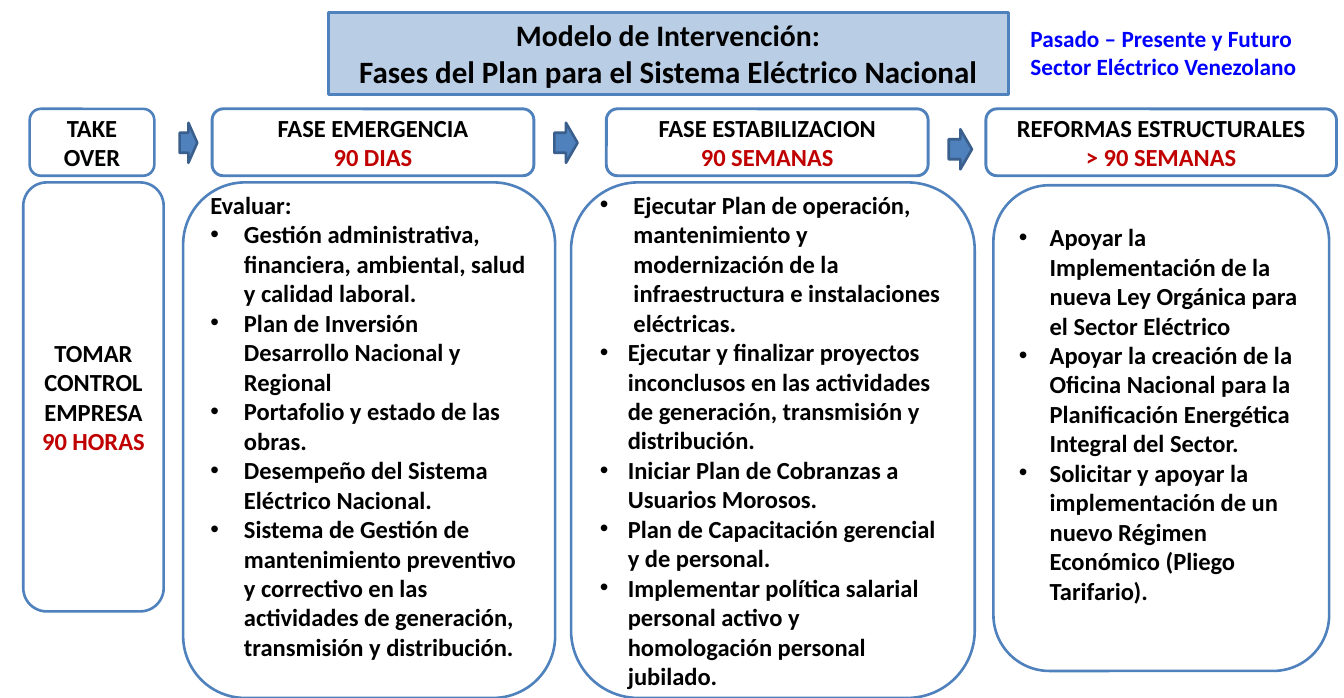
import pptx
import pptx.util
import pptx.dml.color
import pptx.enum.shapes
import pptx.enum.text
import lxml.etree

Pt = pptx.util.Pt
Kind = pptx.enum.shapes.MSO_SHAPE
Align = pptx.enum.text.PP_ALIGN
Anchor = pptx.enum.text.MSO_ANCHOR

HUES = {"ink": "000000", "red": "C00000", "link": "0000FF", "white": "FFFFFF",
        "pale": "B9CDE5", "blue": "4F81BD", "edge": "3A5F8C"}

TITLE = [("Modelo de Intervención:", 23), ("Fases del Plan para el Sistema Eléctrico Nacional", 24)]
THEME = ["Pasado – Presente y Futuro", "Sector Eléctrico Venezolano"]

HEADS = [
    (23, 96.5, 2, "TAKE OVER", None),
    (164.2, 249.1, 2.25, "FASE EMERGENCIA", "90 DIAS"),
    (469.4, 249.1, 2.25, "FASE ESTABILIZACION", "90 SEMANAS"),
    (763.2, 271.4, 2.25, "REFORMAS ESTRUCTURALES", "> 90 SEMANAS"),
]
ARROWS = [(139, 95, 13.7), (429.1, 95, 18), (734.4, 100, 18)]

TAKE = ((18, 141.1, 108.7, 331.9), "TOMAR CONTROL EMPRESA", "90 HORAS")
PHASES = [
    ((141.8, 141.1, 288, 398.9), 26, [
        ("Evaluar:", 0),
        ("Gestión administrativa, financiera, ambiental, salud y calidad laboral.", 26),
        ("Plan de Inversión Desarrollo Nacional y Regional", 26),
        ("Portafolio y estado de las obras.", 26),
        ("Desempeño del Sistema Eléctrico Nacional.", 26),
        ("Sistema de Gestión de mantenimiento preventivo y correctivo en las "
         "actividades de generación, transmisión y distribución.", 26)]),
    ((442.1, 141.1, 312.5, 398.9), 3.6, [
        ("Ejecutar Plan de operación, mantenimiento y modernización de la "
         "infraestructura e instalaciones eléctricas.", 26),
        ("Ejecutar y finalizar proyectos inconclusos en las actividades de "
         "generación, transmisión y distribución.", 21.6),
        ("Iniciar Plan de Cobranzas a Usuarios Morosos.", 21.6),
        ("Plan de Capacitación gerencial y de personal.", 21.6),
        ("Implementar política salarial personal activo y homologación personal jubilado.", 21.6)]),
    ((769, 143.3, 259.9, 375.8), 26, [
        ("Apoyar la Implementación de la nueva Ley Orgánica para el Sector Eléctrico", 23.8),
        ("Apoyar la creación de la Oficina Nacional para la Planificación "
         "Energética Integral del Sector.", 23.8),
        ("Solicitar y apoyar la implementación de un nuevo Régimen Económico "
         "(Pliego Tarifario).", 23.8)]),
]

deck = pptx.Presentation()
deck.slide_width, deck.slide_height = Pt(1040.4), Pt(540)
slide = deck.slides.add_slide(deck.slide_layouts[6])


def tint(name):
    return pptx.dml.color.RGBColor.from_string(HUES[name])


def apply(item, values):
    for key, value in values.items():
        setattr(item, key, value)


def draw(kind, at, width=2, fill="white", edge="blue"):
    shape = slide.shapes.add_shape(kind, *map(Pt, at))
    shape.shadow.inherit = False
    shape.fill.solid()
    shape.fill.fore_color.rgb = tint(fill)
    shape.line.color.rgb = tint(edge)
    shape.line.width = Pt(width)
    return shape


def write(shape, lines, align=Align.CENTER, anchor=Anchor.MIDDLE, foot=3.6, wrap=True):
    frame = shape.text_frame
    apply(frame, {"word_wrap": wrap, "vertical_anchor": anchor,
                  "margin_left": Pt(7.2), "margin_right": Pt(7.2),
                  "margin_top": Pt(3.6), "margin_bottom": Pt(foot)})
    for i, (text, size, hue, indent) in enumerate(lines):
        para = frame.add_paragraph() if i else frame.paragraphs[0]
        para.alignment = align
        if indent:
            props = para._p.get_or_add_pPr()
            props.set("marL", str(Pt(indent)))
            props.set("indent", str(-Pt(indent)))
            tag = "{http://schemas.openxmlformats.org/drawingml/2006/main}"
            lxml.etree.SubElement(props, tag + "buFont").set("typeface", "Arial")
            lxml.etree.SubElement(props, tag + "buChar").set("char", "•")
        run = para.add_run()
        run.text = text
        apply(run.font, {"name": "Calibri", "size": Pt(size), "bold": True})
        run.font.color.rgb = tint(hue)


def label(at, width, name, term):
    lines = [(name, 19, "ink", 0)]
    if term:
        lines.append((term, 19, "red", 0))
    write(draw(Kind.ROUNDED_RECTANGLE, at, width), lines)


title = draw(Kind.RECTANGLE, (254.2, 9.4, 526.3, 64), 2.25, "pale")
write(title, [(text, size, "ink", 0) for text, size in TITLE], anchor=Anchor.TOP)

theme = slide.shapes.add_textbox(*map(Pt, (790.6, 15.1, 223.2, 51.1)))
write(theme, [(text, 18, "link", 0) for text in THEME], Align.LEFT, Anchor.TOP, wrap=False)

for left, wide, width, name, term in HEADS:
    label((left, 84.2, wide, 51.8), width, name, term)

for left, top, wide in ARROWS:
    draw(Kind.RIGHT_ARROW, (left, top, wide, 31), fill="blue", edge="edge")

at, name, term = TAKE
label(at, 2, name, term)

for at, foot, points in PHASES:
    lines = [(text, 19, "ink", indent) for text, indent in points]
    write(draw(Kind.ROUNDED_RECTANGLE, at), lines, Align.LEFT, foot=foot)

deck.save("out.pptx")
